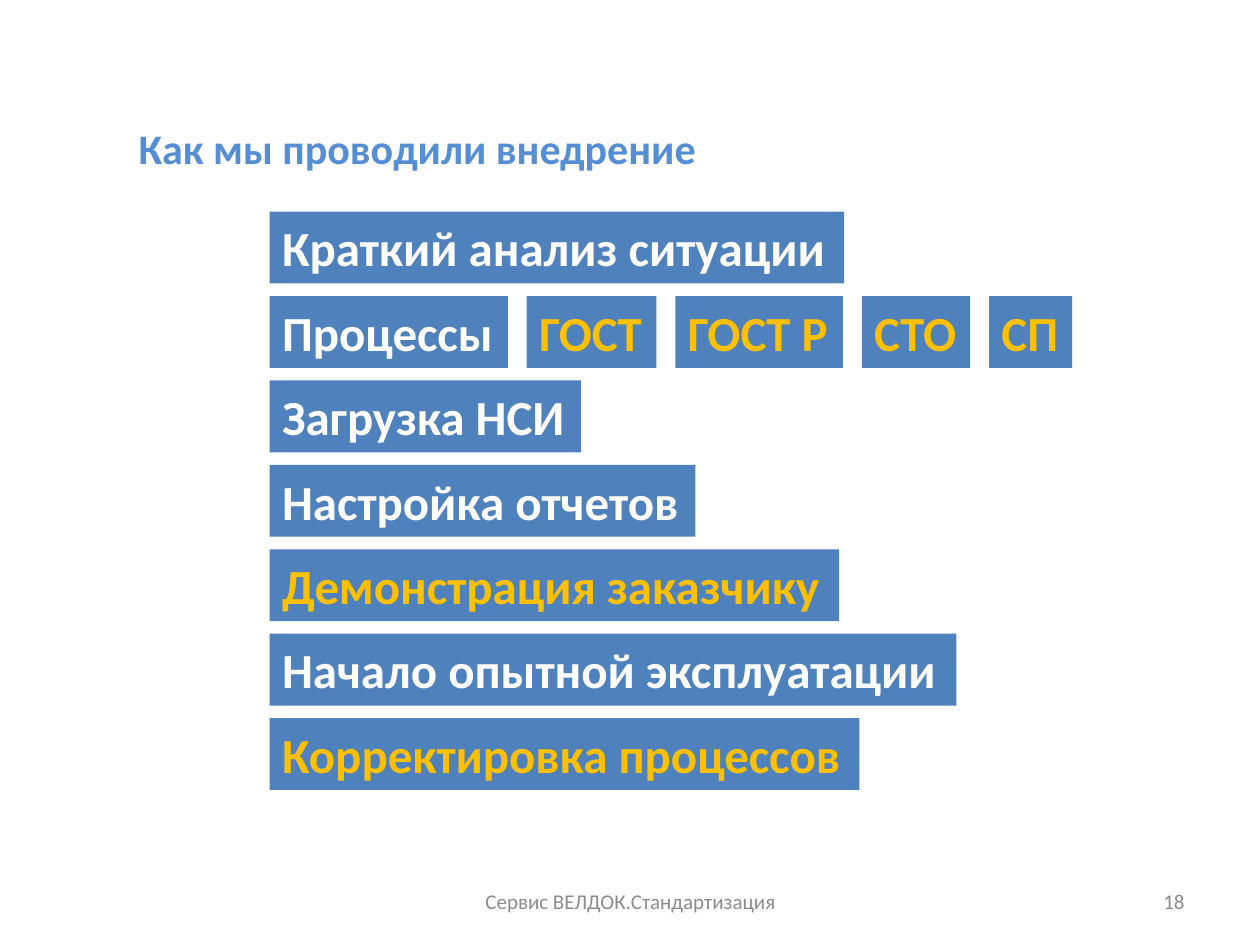
from pptx import Presentation
from pptx.dml.color import RGBColor
from pptx.enum.shapes import MSO_SHAPE
from pptx.enum.text import MSO_ANCHOR, MSO_AUTO_SIZE, PP_ALIGN
from pptx.util import Inches, Pt

RECTANGLE = MSO_SHAPE.RECTANGLE
TOP, MIDDLE = MSO_ANCHOR.TOP, MSO_ANCHOR.MIDDLE
LEFT, CENTER, RIGHT = PP_ALIGN.LEFT, PP_ALIGN.CENTER, PP_ALIGN.RIGHT
GROW, FIXED = MSO_AUTO_SIZE.SHAPE_TO_FIT_TEXT, MSO_AUTO_SIZE.NONE

FONT = "Calibri"
TITLE_BLUE, BOX_BLUE = "558ED5", "4F81BD"
WHITE, GOLD, GREY = "FFFFFF", "FFC000", "8C8C8C"

TITLE = "Как мы проводили внедрение"
# Each row holds boxes of (text, width, text colour)
STEP_ROWS = [
    [("Краткий анализ ситуации", 4.56, WHITE)],
    [
        ("Процессы", 1.89, WHITE),
        ("ГОСТ", 1.03, GOLD),
        ("ГОСТ Р", 1.33, GOLD),
        ("СТО", 0.86, GOLD),
        ("СП", 0.66, GOLD),
    ],
    [("Загрузка НСИ", 2.47, WHITE)],
    [("Настройка отчетов", 3.38, WHITE)],
    [("Демонстрация заказчику", 4.52, GOLD)],
    [("Начало опытной эксплуатации", 5.45, WHITE)],
    [("Корректировка процессов", 4.68, GOLD)],
]
# Text, left, width, alignment
FOOTERS = [
    ("Сервис ВЕЛДОК.Стандартизация", 3.42, 3.17, CENTER),
    ("18", 7.17, 2.33, RIGHT),
]

STEPS_LEFT, STEPS_TOP = 2.14, 1.68
STEP_HEIGHT, ROW_PITCH, BOX_GAP = 0.57, 0.67, 0.15
FOOTER_TOP, FOOTER_HEIGHT = 6.95, 0.4


def color(hex_value):
    return RGBColor.from_string(hex_value)


def write(shape, text, size, hex_value, bold=False, align=LEFT,
          anchor=TOP, wrap=True, auto_size=FIXED):
    frame = shape.text_frame
    frame.word_wrap = wrap
    frame.auto_size = auto_size
    frame.vertical_anchor = anchor
    paragraph = frame.paragraphs[0]
    paragraph.alignment = align
    run = paragraph.add_run()
    run.text = text
    run.font.name = FONT
    run.font.size = Pt(size)
    run.font.bold = bold
    run.font.color.rgb = color(hex_value)


def add_step(slide, text, left, top, width, text_color):
    box = slide.shapes.add_shape(
        RECTANGLE, Inches(left), Inches(top), Inches(width), Inches(STEP_HEIGHT))
    box.shadow.inherit = False
    box.fill.solid()
    box.fill.fore_color.rgb = color(BOX_BLUE)
    box.line.fill.background()
    write(box, text, 28, text_color, bold=True, wrap=False, auto_size=GROW)


def main():
    presentation = Presentation()
    presentation.slide_width = Inches(10)
    presentation.slide_height = Inches(7.5)
    slide = presentation.slides.add_slide(
        presentation.slide_layouts.get_by_name("Title Only"))

    title = slide.shapes.title
    title.left, title.top = Inches(1), Inches(0.92)
    title.width, title.height = Inches(8.25), Inches(0.5)
    write(title, TITLE, 24, TITLE_BLUE, bold=True)

    for index, row in enumerate(STEP_ROWS):
        left = STEPS_LEFT
        for text, width, text_color in row:
            add_step(slide, text, left, STEPS_TOP + index * ROW_PITCH, width, text_color)
            left += width + BOX_GAP

    for text, left, width, align in FOOTERS:
        footer = slide.shapes.add_textbox(
            Inches(left), Inches(FOOTER_TOP), Inches(width), Inches(FOOTER_HEIGHT))
        write(footer, text, 12, GREY, align=align, anchor=MIDDLE)

    presentation.save("out.pptx")


if __name__ == "__main__":
    main()
